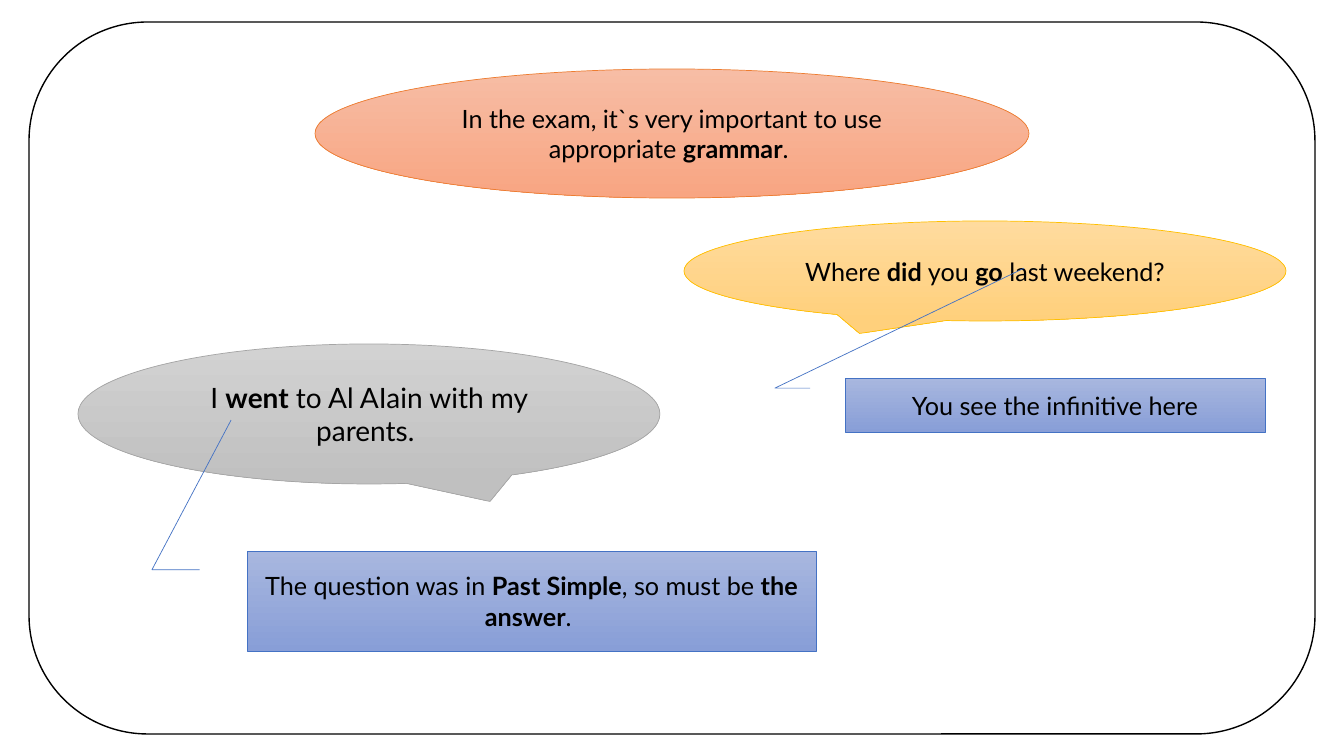
from pptx import Presentation
from pptx.dml.color import RGBColor
from pptx.enum.shapes import MSO_SHAPE as SHAPE
from pptx.enum.text import MSO_ANCHOR, PP_ALIGN
from pptx.util import Emu, Pt

BLACK = RGBColor(0x00, 0x00, 0x00)
WHITE = RGBColor(0xFF, 0xFF, 0xFF)
ORANGE = RGBColor(0xED, 0x7D, 0x31), RGBColor(0xF7, 0xBD, 0xA5), RGBColor(0xF8, 0xA5, 0x82)
GOLD = RGBColor(0xFF, 0xC0, 0x00), RGBColor(0xFF, 0xDB, 0x9E), RGBColor(0xFF, 0xD0, 0x7C)
GRAY = RGBColor(0xA5, 0xA5, 0xA5), RGBColor(0xD2, 0xD2, 0xD2), RGBColor(0xC0, 0xC0, 0xC0)
BLUE = RGBColor(0x44, 0x72, 0xC4), RGBColor(0xA8, 0xB7, 0xDF), RGBColor(0x88, 0x9E, 0xD7)


def px(n):
    return Emu(round(n * 914400 / 100.8))


def write(sp, text, size=18, font="Lato", color=BLACK):
    tf = sp.text_frame
    tf.word_wrap = True
    tf.vertical_anchor = MSO_ANCHOR.MIDDLE
    p = tf.paragraphs[0]
    p.alignment = PP_ALIGN.CENTER
    for i, part in enumerate(text.split("*")):
        r = p.add_run()
        r.text = part
        r.font.name = font
        r.font.size = Pt(size)
        r.font.bold = i % 2 == 1
        r.font.color.rgb = color


prs = Presentation()
prs.slide_width, prs.slide_height = px(1344), px(756)
s = prs.slides.add_slide(prs.slide_layouts[6])

frame = s.shapes.add_shape(SHAPE.ROUNDED_RECTANGLE, px(29), px(22), px(1286), px(712))
frame.shadow.inherit = False
frame.fill.solid()
frame.fill.fore_color.rgb = WHITE
frame.line.color.rgb = BLACK
frame.line.width = Pt(1)

bubbles = [
    (SHAPE.OVAL, (315, 69, 714, 129), ORANGE, (), 18,
     "In the exam, it`s very important to use appropriate *grammar*. "),
    (SHAPE.OVAL_CALLOUT, (684, 221, 602, 100), GOLD, (), 18,
     "Where *did *you *go* last weekend?"),
    (SHAPE.LINE_CALLOUT_2, (845, 378, 420, 54), BLUE,
     (0.188, -0.083, 0.188, -0.167, -2.033, 0.426), 18,
     "You see the infinitive here"),
    (SHAPE.OVAL_CALLOUT, (78, 344, 582, 140), GRAY, (0.208, 0.625), 20,
     "I *went* to Al AIain with my parents. "),
    (SHAPE.LINE_CALLOUT_2, (247, 551, 569, 100), BLUE,
     (0.188, -0.083, 0.188, -0.167, -1.308, -0.028), 18,
     "The question was in *Past Simple*, so must be *the answer*. "),
]
for kind, box, (edge, top, bottom), adjustments, size, text in bubbles:
    sp = s.shapes.add_shape(kind, *map(px, box))
    sp.shadow.inherit = False
    for i, value in enumerate(adjustments):
        sp.adjustments[i] = value
    sp.fill.gradient()
    sp.fill.gradient_angle = 270
    for stop, color in zip(sp.fill.gradient_stops, (top, bottom)):
        stop.color.rgb = color
    sp.line.color.rgb = edge
    sp.line.width = Pt(0.5)
    write(sp, text, size=size)

prs.save("out.pptx")
